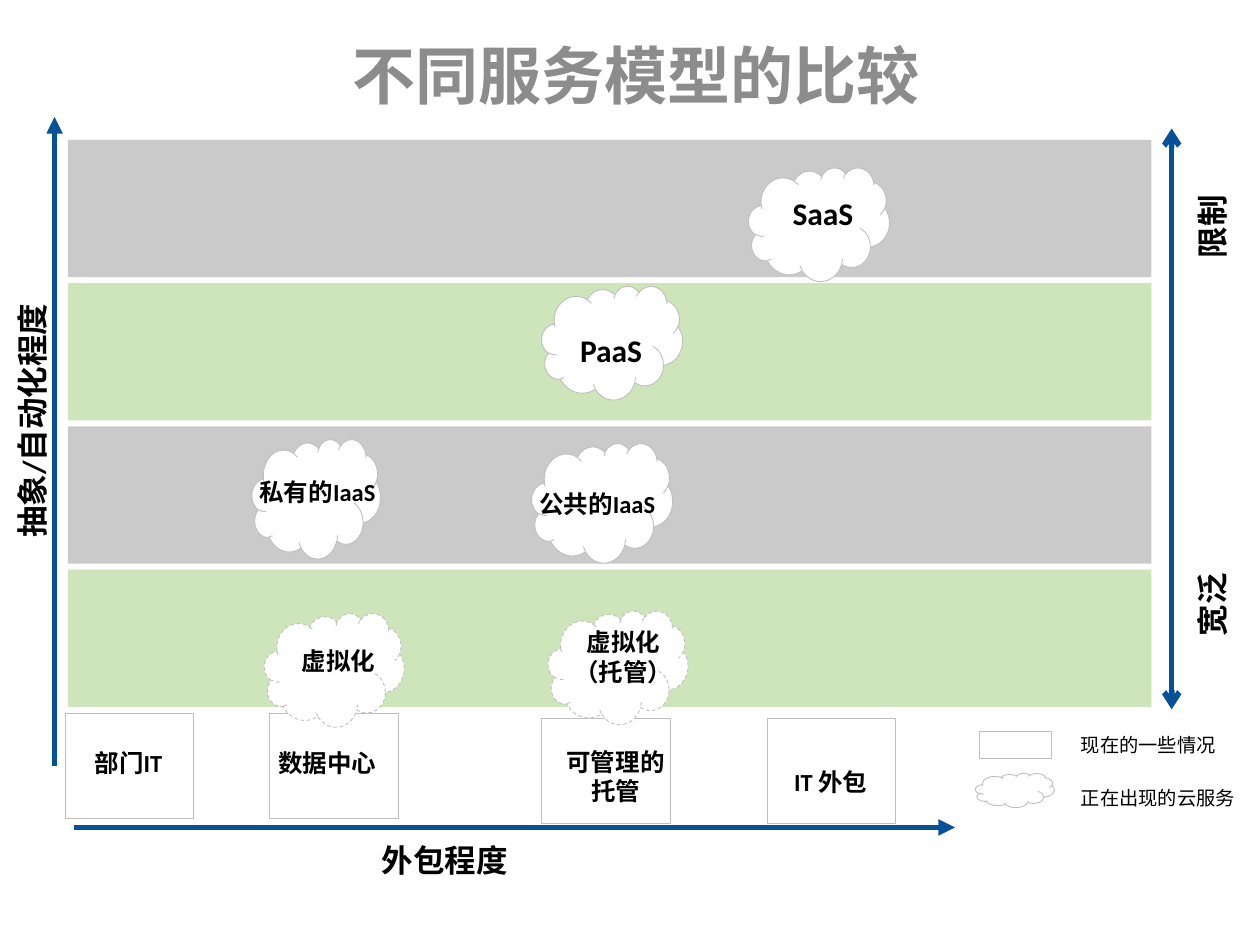
from lxml.etree import SubElement
from pptx import Presentation
from pptx.dml.color import RGBColor
from pptx.enum.dml import MSO_LINE
from pptx.enum.shapes import MSO_CONNECTOR, MSO_SHAPE
from pptx.enum.text import MSO_ANCHOR, PP_ALIGN
from pptx.oxml.ns import qn
from pptx.util import Cm, Pt

BLACK, WHITE, OUTLINE, AXIS = "000000", "FFFFFF", "BFBFBF", "075198"
GREY_BAND, GREEN_BAND = "5F5F5F", "6CAE30"

# Each service: text, size, cloud box and label centre within its band, dashed outline
BANDS = [
    (GREY_BAND, [("SaaS", 18, (13.72, 0.56, 2.84, 2.29), (15.22, 1.48), False)]),
    (GREEN_BAND, [("PaaS", 18, (9.55, 0.06, 2.84, 2.29), (10.95, 1.35), False)]),
    (GREY_BAND, [("公共的IaaS", 14, (9.35, 0.34, 2.84, 2.41), (10.67, 1.56), False),
                 ("私有的IaaS", 14, (3.71, 0.26, 2.59, 2.41), (5.03, 1.31), False)]),
    (GREEN_BAND, [("虚拟化\n（托管）", 14, (9.68, 0.83, 2.82, 2.29), (11.2, 1.76), True),
                  ("虚拟化", 14, (3.96, 0.88, 2.82, 2.29), (5.46, 1.83), True)]),
]
# Each sourcing option: text, box offset in the row, label centre within the box
SOURCING = [
    ("部门IT", (0, 0), (1.27, 0.99)),
    ("数据中心", (4.12, 0), (1.16, 0.99)),
    ("可管理的托管", (9.6, 0.1), (1.49, 1.17)),
    ("IT 外包", (14.15, 0.1), (1.28, 1.27)),
]


def rgb(value):
    return RGBColor.from_string(value)


def format_text(frame, size, color=BLACK, bold=True, font="Calibri", align=PP_ALIGN.CENTER):
    frame.word_wrap = True
    frame.vertical_anchor = MSO_ANCHOR.MIDDLE
    for paragraph in frame.paragraphs:
        paragraph.alignment = align
        for run in paragraph.runs:
            run.font.size = Pt(size)
            run.font.bold = bold
            run.font.name = font
            run.font.color.rgb = rgb(color)


def add_label(slide, text, size, center, width=3.6, height=1.2, rotation=0, **style):
    x, y = center
    label = slide.shapes.add_textbox(
        Cm(x - width / 2), Cm(y - height / 2), Cm(width), Cm(height))
    label.rotation = rotation
    label.text_frame.text = text
    format_text(label.text_frame, size, **style)


def add_outlined(slide, preset, box, fill=WHITE, dashed=False):
    shape = slide.shapes.add_shape(preset, *map(Cm, box))
    shape.shadow.inherit = False
    if fill:
        shape.fill.solid()
        shape.fill.fore_color.rgb = rgb(fill)
    else:
        shape.fill.background()
    shape.line.color.rgb = rgb(OUTLINE)
    shape.line.width = Pt(0.5)
    if dashed:
        shape.line.dash_style = MSO_LINE.DASH


def add_axis(slide, start, end, head=None, tail=None):
    axis = slide.shapes.add_connector(MSO_CONNECTOR.STRAIGHT, *map(Cm, start + end))
    axis.line.color.rgb = rgb(AXIS)
    axis.line.width = Pt(3.15)
    line = axis.line._get_or_add_ln()
    for tag, kind in (("a:headEnd", head), ("a:tailEnd", tail)):
        if kind:
            SubElement(line, qn(tag), type=kind)
    SubElement(axis._element.spPr, qn("a:effectLst"))


def add_title(slide, box, text):
    title = slide.shapes.title
    title.left, title.top, title.width, title.height = map(Cm, box)
    title.text_frame.text = text
    format_text(title.text_frame, 36, "8C8C8C")


def add_legend(slide, box):
    left, top, width, height = box
    row = height / 2
    entries = [
        (MSO_SHAPE.RECTANGLE, (0.08, 0.26, 1.45, 0.56), "现在的一些情况"),
        (MSO_SHAPE.CLOUD, (0, 0.04, 1.6, 0.69), "正在出现的云服务"),
    ]
    text_left = 1.88
    text_width = width - text_left
    for index, (preset, (dx, dy, w, h), text) in enumerate(entries):
        y = top + index * row
        add_outlined(slide, preset, (left + dx, y + dy, w, h), fill=None)
        add_label(slide, text, 11, (left + text_left + text_width / 2, y + row / 2),
                  text_width, 1.07, bold=False, font="Arial", align=PP_ALIGN.LEFT)


def add_sourcing_row(slide, box):
    left, top, width, height = box
    for text, (dx, dy), (label_x, label_y) in SOURCING:
        x, y = left + dx, top + dy
        add_outlined(slide, MSO_SHAPE.RECTANGLE, (x, y, 2.59, 2.13))
        add_label(slide, text, 14, (x + label_x, y + label_y), 2.8)
    axis_y = top + height
    add_axis(slide, (left + 0.18, axis_y), (left + width, axis_y), tail="triangle")
    add_label(slide, "外包程度", 18, (left + 7.65, axis_y + 0.66), 6.7, 1.02)


def add_band(slide, box, color, services):
    left, top = box[:2]
    band = slide.shapes.add_shape(MSO_SHAPE.RECTANGLE, *map(Cm, box))
    band.shadow.inherit = False
    band.line.fill.background()
    band.fill.solid()
    band.fill.fore_color.rgb = rgb(color)
    tint = band._element.spPr.find(qn("a:solidFill"))[0]
    SubElement(tint, qn("a:alpha"), val="33000")
    for text, size, (dx, dy, w, h), (label_x, label_y), dashed in services:
        add_outlined(slide, MSO_SHAPE.CLOUD, (left + dx, top + dy, w, h), dashed=dashed)
        add_label(slide, text, size, (left + label_x, top + label_y))


def add_service_bands(slide, box):
    left, top, width, height = box
    gap = 0.12
    band_height = (height - gap * (len(BANDS) - 1)) / len(BANDS)
    for index, (color, services) in enumerate(BANDS):
        y = top + index * (band_height + gap)
        add_band(slide, (left, y, width, band_height), color, services)


def add_abstraction_axis(slide, box):
    left, top, width, height = box
    x = left + width
    add_axis(slide, (x, top), (x, top + height), head="triangle")
    add_label(slide, "抽象/自动化程度", 18, (left + 0.65, top + 6.12), 11.63, 1.27, 270)


def add_scope_axis(slide, box):
    left, top, width, height = box
    add_axis(slide, (left, top), (left, top + height), head="arrow", tail="arrow")
    for text, y in (("限制", 1.98), ("宽泛", 9.6)):
        add_label(slide, text, 18, (left + width / 2, top + y), 3, 1.27, 270)


def main():
    deck = Presentation()
    deck.slide_width, deck.slide_height = Cm(25.4), Cm(19.05)
    slide = deck.slides.add_slide(deck.slide_layouts[5])
    add_title(slide, (1.4, 0.6, 22.86, 1.78), "不同服务模型的比较")
    add_legend(slide, (19.66, 14.48, 5.69, 2.14))
    add_sourcing_row(slide, (1.32, 14.38, 17.93, 2.3))
    add_abstraction_axis(slide, (0, 2.36, 1.1, 13.08))
    add_service_bands(slide, (1.37, 2.82, 21.84, 11.43))
    add_scope_axis(slide, (23.62, 2.59, 1.63, 11.71))
    deck.save("out.pptx")


if __name__ == "__main__":
    main()
